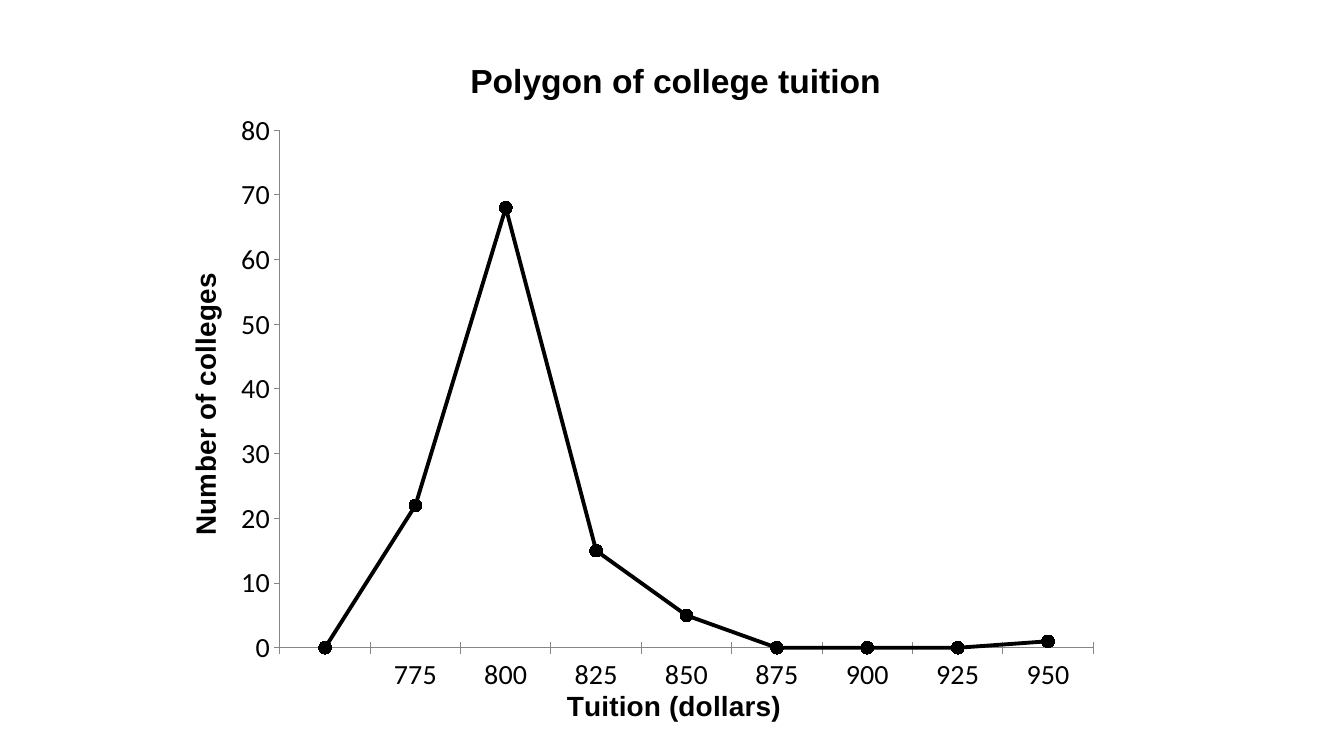
from dataclasses import dataclass

from pptx import Presentation
from pptx import util as u
from pptx.chart.data import CategoryChartData
from pptx.dml.color import RGBColor
from pptx.enum import chart as charts
from pptx.oxml import parse_xml
from pptx.oxml.ns import nsdecls, qn

COLORS = {"ink": "000000", "axis": "868686", "paper": "FFFFFF"}
CATEGORIES = ["", "775", "800", "825", "850", "875", "900", "925", "950"]
COLLEGES = [0, 22, 68, 15, 5, 0, 0, 0, 1]


@dataclass
class Title:
    wording: str
    size: float
    left: float  # fractions of the chart's width and height
    top: float
    rotation: int = 0


@dataclass
class AxisStyle:
    title: Title
    tick_mark: charts.XL_TICK_MARK


CHART_TITLE = Title("Polygon of college tuition", 24, 0.31, 0.04)
CATEGORY_STYLE = AxisStyle(Title("Tuition (dollars)", 20, 0.4, 0.94),
                           charts.XL_TICK_MARK.CROSS)
VALUE_STYLE = AxisStyle(Title("Number of colleges", 20, 0.05, 0.35, -90),
                        charts.XL_TICK_MARK.OUTSIDE)


def color(name: str) -> RGBColor:
    return RGBColor.from_string(COLORS[name])


def set_layout(element, index: int, values: dict) -> None:
    """Give a chart part a manual layout as its child at index."""
    for old_layout in element.findall(qn("c:layout")):
        element.remove(old_layout)
    settings = "".join(f'<c:{tag} val="{value}"/>' for tag, value in values.items())
    element.insert(index, parse_xml(
        f'<c:layout {nsdecls("c")}><c:manualLayout>{settings}'
        "</c:manualLayout></c:layout>"))


def write_title(target, title: Title) -> None:
    frame = target.text_frame
    frame.text = title.wording
    font = frame.paragraphs[0].font
    font.name, font.size, font.bold = "Arial", u.Pt(title.size), True
    font.color.rgb = color("ink")
    body = frame._txBody.find(qn("a:bodyPr"))
    body.set("rot", str(title.rotation * 60000))
    body.set("vert", "horz")
    set_layout(target._element, 1, {"xMode": "edge", "yMode": "edge",
                                    "x": title.left, "y": title.top})


def style_axis(axis, style: AxisStyle) -> None:
    axis.has_major_gridlines = False
    axis.major_tick_mark = style.tick_mark
    axis.minor_tick_mark = charts.XL_TICK_MARK.NONE
    axis.tick_labels.font.size = u.Pt(20)
    axis.format.line.color.rgb = color("axis")
    axis.format.line.width = u.Pt(0.75)
    write_title(axis.axis_title, style.title)


def style_series(series) -> None:
    series.smooth = False
    series.format.line.color.rgb = color("ink")
    series.format.line.width = u.Pt(2.75)
    marker = series.marker
    marker.style = charts.XL_MARKER_STYLE.CIRCLE
    marker.size = 9
    marker.format.fill.solid()
    marker.format.fill.fore_color.rgb = color("ink")
    marker.format.line.color.rgb = color("ink")


def add_polygon(slide) -> None:
    data = CategoryChartData()
    data.categories = CATEGORIES
    data.add_series("Series 1", COLLEGES)
    chart = slide.shapes.add_chart(
        charts.XL_CHART_TYPE.LINE_MARKERS, u.Pt(91.44), u.Pt(18),
        u.Pt(774.72), u.Pt(504), data).chart
    chart.has_legend = False
    chart.font.name, chart.font.size = "Calibri", u.Pt(18)
    chart.font.color.rgb = color("ink")

    # Titles and axes
    write_title(chart.chart_title, CHART_TITLE)
    style_axis(chart.category_axis, CATEGORY_STYLE)
    style_axis(chart.value_axis, VALUE_STYLE)
    chart.value_axis.minimum_scale = 0
    chart.value_axis.maximum_scale = 80
    chart.value_axis.major_unit = 10

    # Plot area and line
    plot = chart.plots[0]
    plot.vary_by_categories = False
    style_series(plot.series[0])
    plot_area = chart._chartSpace.chart.plotArea
    set_layout(plot_area, 0, {
        "layoutTarget": "inner", "xMode": "edge", "yMode": "edge",
        "x": 0.14, "y": 0.15, "w": 0.75, "h": 0.74})
    plot_area.append(parse_xml(
        f'<c:spPr {nsdecls("c", "a")}><a:solidFill>'
        f'<a:srgbClr val="{COLORS["paper"]}"/></a:solidFill></c:spPr>'))


def main() -> None:
    presentation = Presentation()
    presentation.slide_width, presentation.slide_height = u.Pt(960), u.Pt(540)
    slide = presentation.slides.add_slide(presentation.slide_layouts[6])
    add_polygon(slide)
    presentation.save("out.pptx")


if __name__ == "__main__":
    main()
